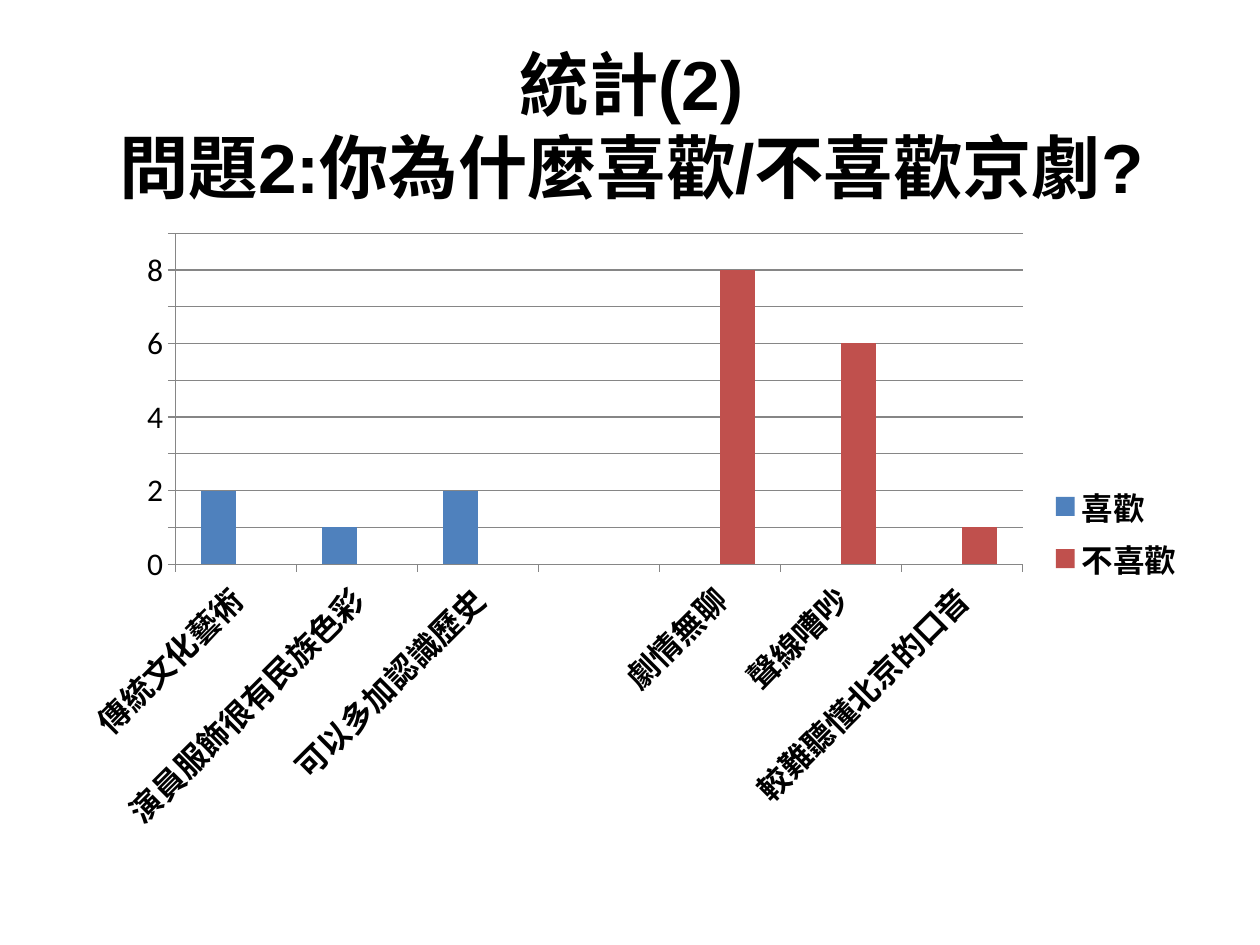
import pptx
import pptx.chart.data
import pptx.dml.color
import pptx.enum.chart
import pptx.enum.text
import pptx.oxml
import pptx.oxml.ns
import pptx.util
from pptx.util import Cm, Pt

COLORS = {"text": "000000", "paper": "FFFFFF", "line": "868686",
          "like": "4F81BD", "dislike": "C0504D"}
NS = pptx.oxml.ns.nsdecls("a", "c")
REASONS = ["傳統文化藝術", "演員服飾很有民族色彩", "可以多加認識歷史", "",
           "劇情無聊", "聲線嘈吵", "較難聽懂北京的口音"]
ANSWERS = [("喜歡", "like", [2, 1, 2, None, None, None, None]),
           ("不喜歡", "dislike", [None, None, None, None, 8, 6, 1])]


def rgb(name):
    return pptx.dml.color.RGBColor.from_string(COLORS[name])


def set_all(target, **values):
    for name, value in values.items():
        setattr(target, name, value)


def paper_fill(opacity):
    """Return a see-through paper fill; opacity is in percent."""
    return (f'<a:solidFill {NS}><a:srgbClr val="{COLORS["paper"]}">'
            f'<a:alpha val="{opacity * 1000}"/></a:srgbClr></a:solidFill>')


def style_font(font, size, bold, family):
    set_all(font, size=Pt(size), bold=bold, name=family)
    font.color.rgb = rgb("text")


def style_line(line):
    line.color.rgb = rgb("line")
    line.width = Pt(0.75)


def add_title(page, left, top, width, height):
    box = page.shapes.add_textbox(left, top, width, height)
    box.fill.solid()
    shape_format = box._element.spPr
    shape_format.replace(shape_format.find(pptx.oxml.ns.qn("a:solidFill")),
                         pptx.oxml.parse_xml(paper_fill(73)))
    set_all(box.text_frame, word_wrap=True, margin_left=0, margin_right=0,
            vertical_anchor=pptx.enum.text.MSO_ANCHOR.MIDDLE)
    para = box.text_frame.paragraphs[0]
    para.text = "統計(2)\v問題2:你為什麼喜歡/不喜歡京劇?"
    para.alignment = pptx.enum.text.PP_ALIGN.CENTER
    for span in para.runs:
        style_font(span.font, 39.6, True, "Arial")


def style_axes(chart):
    reasons, counts = chart.category_axis, chart.value_axis
    for axis, bold in ((reasons, True), (counts, False)):
        axis.major_tick_mark = pptx.enum.chart.XL_TICK_MARK.OUTSIDE
        style_font(axis.tick_labels.font, 18, bold, "Calibri")
        style_line(axis.format.line)
    reasons._element.txPr.bodyPr.set("rot", "-2700000")
    set_all(counts, minimum_scale=0, maximum_scale=9, major_unit=1,
            has_major_gridlines=True)
    style_line(counts.major_gridlines.format.line)


def add_reason_chart(page, left, top, width, height):
    data = pptx.chart.data.CategoryChartData()
    data.categories = REASONS
    for name, _, counts in ANSWERS:
        data.add_series(name, counts)
    kind = pptx.enum.chart.XL_CHART_TYPE.COLUMN_CLUSTERED
    chart = page.shapes.add_chart(kind, left, top, width, height, data).chart
    style_font(chart.font, 18, False, "Calibri")
    set_all(chart, has_title=False, has_legend=True)
    set_all(chart.legend, include_in_layout=False,
            position=pptx.enum.chart.XL_LEGEND_POSITION.RIGHT)
    style_font(chart.legend.font, 18, True, "Calibri")
    style_axes(chart)
    plot = chart.plots[0]
    set_all(plot, gap_width=150, overlap=0, vary_by_categories=False)
    for series, (_, color, _) in zip(plot.series, ANSWERS):
        series.format.fill.solid()
        series.format.fill.fore_color.rgb = rgb(color)
    chart._chartSpace.chart.addnext(pptx.oxml.parse_xml(
        f'<c:spPr {NS}>{paper_fill(69)}<a:ln><a:noFill/></a:ln></c:spPr>'))


def main():
    deck = pptx.Presentation()
    set_all(deck, slide_width=Cm(25.4), slide_height=Cm(19.05))
    page = deck.slides.add_slide(deck.slide_layouts[6])
    add_title(page, Cm(1.3), Cm(0.91), Cm(22.86), Cm(3.18))
    add_reason_chart(page, Cm(1.27), Cm(4.45), Cm(22.86), Cm(12.57))
    deck.save("out.pptx")


if __name__ == "__main__":
    main()
